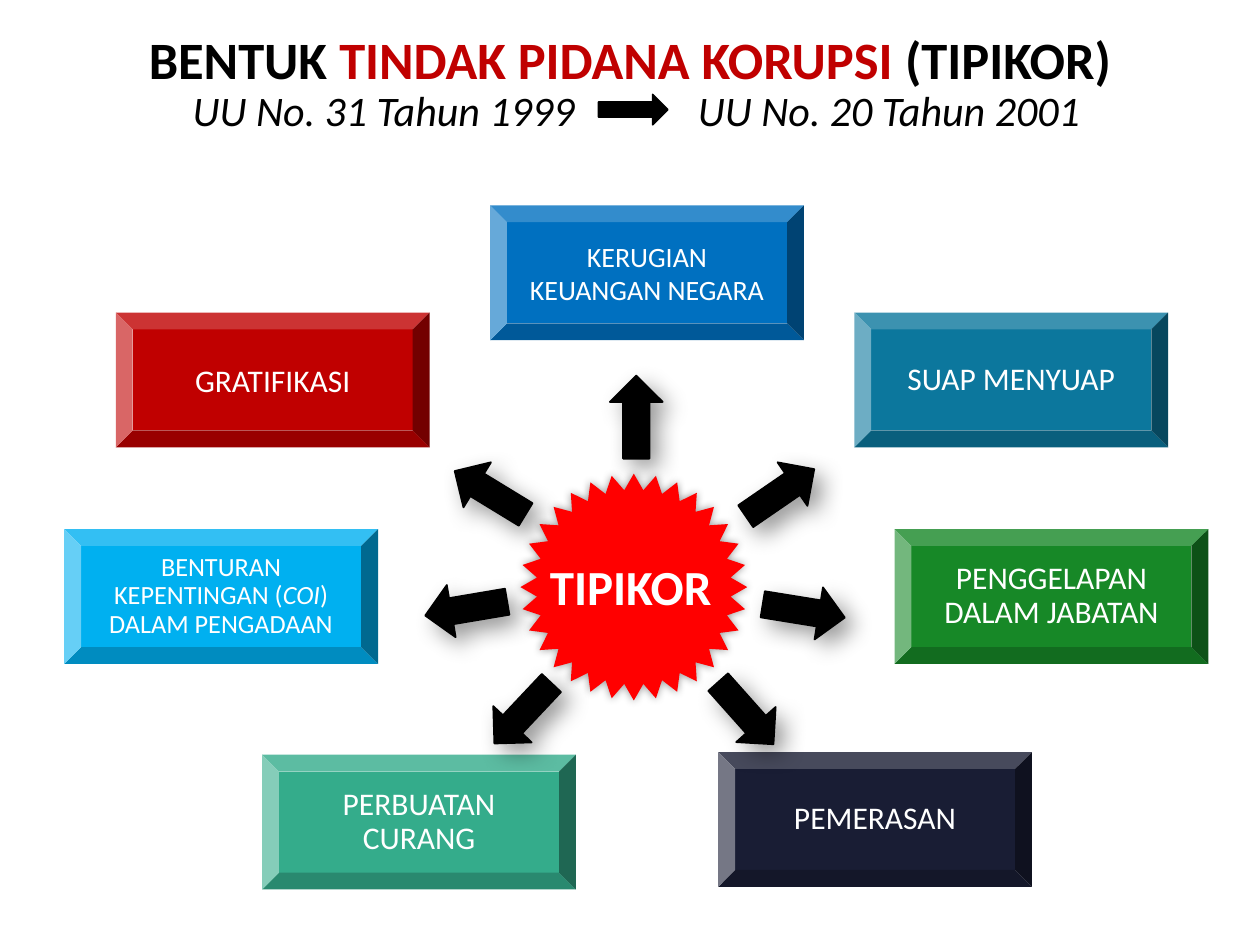
from lxml import etree
from pptx import Presentation
from pptx.dml.color import RGBColor
from pptx.enum.shapes import MSO_SHAPE
from pptx.enum.text import MSO_ANCHOR, MSO_AUTO_SIZE, PP_ALIGN
from pptx.oxml.ns import qn
from pptx.util import Pt

BEVEL, STAR = MSO_SHAPE.BEVEL, MSO_SHAPE.STAR_32_POINT
UP, RIGHT = MSO_SHAPE.UP_ARROW, MSO_SHAPE.RIGHT_ARROW
TOP, MIDDLE = MSO_ANCHOR.TOP, MSO_ANCHOR.MIDDLE
CENTER, LEFT = PP_ALIGN.CENTER, PP_ALIGN.LEFT
NO_AUTOFIT = MSO_AUTO_SIZE.NONE
TITLE_ONLY = 5

FONT = "Calibri"
BLACK, WHITE, RED = "000000", "FFFFFF", "C00000"
CARD_SIZE = (179.3, 77)
ARROW_SIZE = (30.2, 47.5)
ARROW_SHADOW = {"blur": 13, "distance": 7, "angle": 45}
STAR_SHADOW = {"blur": 5, "distance": 0, "angle": 0}

# left, top, fill, text size, line spacing, spans as (text, extra format)
CARDS = [
    (280.1, 117.4, "0070C0", 16, 1, [("KERUGIAN KEUANGAN NEGARA", {})]),
    (66.2, 178.6, RED, 18, 1, [("GRATIFIKASI", {})]),
    (36.7, 302.4, "00B0F0", 15, 0.9, [("BENTURAN KEPENTINGAN (", {}),
                                      ("COI", {"italic": True}),
                                      (") DALAM PENGADAAN", {})]),
    (149.8, 431.3, "34AC8B", 18, 0.9, [("PERBUATAN CURANG", {})]),
    (410.4, 429.8, "191D34", 18, 0.9, [("PEMERASAN", {})]),
    (511.2, 302.4, "178827", 18, 0.9, [("PENGGELAPAN DALAM JABATAN", {})]),
    (488.2, 178.6, "0C779D", 18, 0.9, [("SUAP MENYUAP", {})]),
]

# left, top, rotation
ARROWS = [
    (348.5, 214.6, 0), (430.6, 257.8, 55.5), (444.2, 325.4, 99.2),
    (411.1, 383.8, 138.3), (283.7, 383.8, 223.3), (251.3, 324, 260.4),
    (265, 257.8, 301.4),
]


def color(value):
    return RGBColor.from_string(value)


def write(shape, spans, anchor=TOP, align=CENTER, spacing=1, **base):
    """Fill the shape with one paragraph of (text, extra format) spans."""
    frame = shape.text_frame
    frame.word_wrap = True
    frame.auto_size = NO_AUTOFIT
    frame.vertical_anchor = anchor
    para = frame.paragraphs[0]
    para.alignment, para.line_spacing = align, spacing
    for text, extra in spans:
        span = para.add_run()
        span.text = text
        values = {"name": FONT, "color": WHITE, **base, **extra}
        span.font.color.rgb = color(values.pop("color"))
        for name, value in values.items():
            setattr(span.font, name, value)
    return para


def add_shadow(shape, blur, distance, angle):
    """Put a black shadow of 40 % opacity on the shape."""
    effects = shape._element.spPr.find(qn("a:effectLst"))
    outer = etree.SubElement(
        effects, qn("a:outerShdw"), blurRad=str(Pt(blur)),
        dist=str(Pt(distance)), dir=str(angle * 60000),
        algn="ctr", rotWithShape="0")
    tone = etree.SubElement(outer, qn("a:srgbClr"), val=BLACK)
    etree.SubElement(tone, qn("a:alpha"), val="40000")


def add_figure(page, kind, left, top, size, fill, line=None):
    shape = page.shapes.add_shape(kind, *map(Pt, (left, top, *size)))
    shape.shadow.inherit = False
    shape.fill.solid()
    shape.fill.fore_color.rgb = color(fill)
    if line:
        shape.line.color.rgb = color(line)
        shape.line.width = Pt(1)
    else:
        shape.line.fill.background()
    return shape


def add_text(page, left, top, width, height, spans, **style):
    box = page.shapes.add_textbox(*map(Pt, (left, top, width, height)))
    return write(box, spans, **style)


def add_tab_stop(para, position):
    stops = etree.SubElement(para._p.get_or_add_pPr(), qn("a:tabLst"))
    etree.SubElement(stops, qn("a:tab"), pos=str(Pt(position)), algn="l")


def add_heading(page):
    title = page.shapes.title
    title.left, title.top, title.width, title.height = map(Pt, (0, 15.8, 720, 40.3))
    write(title, [("BENTUK ", {}),
                  ("TINDAK PIDANA KORUPSI ", {"color": RED}),
                  ("(TIPIKOR)", {})],
          spacing=0.9, size=Pt(30), bold=True, color=BLACK)
    laws = add_text(page, 103, 44.6, 530, 36,
                    [("UU No. 31 Tahun 1999\tUU No. 20 Tahun 2001", {})],
                    align=LEFT, size=Pt(24), italic=True, color=BLACK)
    add_tab_stop(laws, 288.7)
    add_figure(page, RIGHT, 342, 54, (39.6, 17.3), BLACK, BLACK)


def add_center(page):
    star = add_figure(page, STAR, 297.4, 270.7, (129.6, 129.6), "FF0000")
    star.adjustments[0] = 0.429
    add_shadow(star, **STAR_SHADOW)
    add_text(page, 301.7, 314.6, 117.4, 41, [("TIPIKOR", {})],
             size=Pt(28), bold=True)


def main():
    deck = Presentation()
    deck.slide_width, deck.slide_height = Pt(720), Pt(540)
    page = deck.slides.add_slide(deck.slide_layouts[TITLE_ONLY])
    for left, top, fill, size, spacing, spans in CARDS:
        card = add_figure(page, BEVEL, left, top, CARD_SIZE, fill)
        write(card, spans, anchor=MIDDLE, spacing=spacing, size=Pt(size))
    for left, top, rotation in ARROWS:
        arrow = add_figure(page, UP, left, top, ARROW_SIZE, BLACK, BLACK)
        arrow.rotation = rotation
        add_shadow(arrow, **ARROW_SHADOW)
    add_center(page)
    add_heading(page)
    deck.save("out.pptx")


if __name__ == "__main__":
    main()
